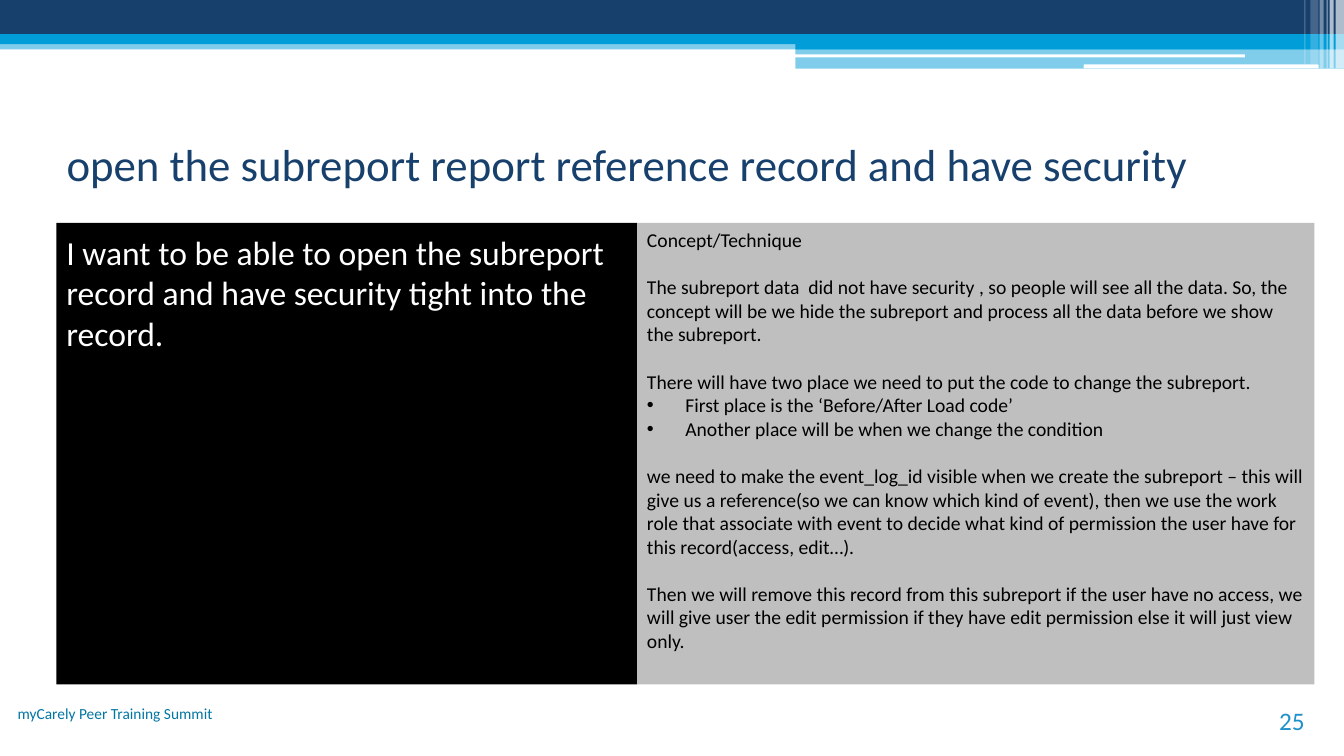
from dataclasses import dataclass

import pptx
import pptx.dml.color
import pptx.enum.shapes
import pptx.enum.text
import pptx.oxml.ns
import pptx.util
from lxml import etree

RECT = pptx.enum.shapes.MSO_SHAPE.RECTANGLE
ROUNDED = pptx.enum.shapes.MSO_SHAPE.ROUNDED_RECTANGLE
ALIGN = pptx.enum.text.PP_ALIGN
ANCHOR = pptx.enum.text.MSO_ANCHOR
WIDTH, HEIGHT = pptx.util.Inches(13.33), pptx.util.Inches(7.5)


@dataclass(frozen=True)
class Theme:
    font: str = "Calibri"
    navy: str = "17406D"
    blue: str = "009DD9"
    footer: str = "0076A3"
    number: str = "2191C9"
    white: str = "FFFFFF"
    black: str = "000000"
    grey: str = "BFBFBF"
    title_size: int = 32
    lead_size: int = 24
    number_size: int = 18
    body_size: int = 14
    footer_size: int = 11
    paragraph_gap: int = 17
    bullet_indent: float = 0.38


THEME = Theme()

# Left, top, width and height in percent of the slide, then fill and opacity
BANDS = [
    ((0, 5.33, 100, 1.2), THEME.blue, 50),
    ((0, 0, 100, 4.53), THEME.navy, 100),
    ((0, 4.53, 100, 1.33), THEME.blue, 100),
    ((59.18, 5.2, 40.82, 1.33), THEME.blue, 100),
    ((59.18, 6.4, 40.82, 2.67), THEME.blue, 50),
]
HIGHLIGHTS = [(59.1, 7.2, 33.53, 0.4), (80.63, 8.53, 17.48, 0.53)]
# Left, width and height in percent of the slide, then opacity
STRIPES = [
    (99.38, 0.62, 9.07, 65),
    (98.93, 0.3, 9.07, 65),
    (98.7, 0.08, 9.07, 60),
    (98.18, 0.3, 9.07, 40),
    (97.5, 0.6, 8.53, 20),
    (97.05, 0.08, 8.53, 30),
]

# Text, whether a gap precedes it, whether it is bulleted
CONCEPT = [
    ("Concept/Technique", False, False),
    ("The subreport data  did not have security , so people will see all the data. "
     "So, the concept will be we hide the subreport and process all the data before "
     "we show the subreport.", True, False),
    ("There will have two place we need to put the code to change the subreport.",
     True, False),
    ("First place is the ‘Before/After Load code’", False, True),
    ("Another place will be when we change the condition", False, True),
    ("we need to make the event_log_id visible when we create the subreport – this "
     "will give us a reference(so we can know which kind of event), then we use the "
     "work role that associate with event to decide what kind of permission the user "
     "have for this record(access, edit…).", True, False),
    ("Then we will remove this record from this subreport if the user have no access, "
     "we will give user the edit permission if they have edit permission else it will "
     "just view only.", True, False),
]


def share(area):
    """Turn percentages of the slide into lengths."""
    left, top, width, height = area
    return [int(WIDTH * left / 100), int(HEIGHT * top / 100),
            int(WIDTH * width / 100), int(HEIGHT * height / 100)]


def color(value):
    return pptx.dml.color.RGBColor.from_string(value)


def add_block(page, area, fill, opacity=100, kind=RECT):
    block = page.shapes.add_shape(kind, *share(area))
    block.shadow.inherit = False
    block.line.fill.background()
    block.fill.solid()
    block.fill.fore_color.rgb = color(fill)
    if opacity < 100:
        tint = block.fill._xPr.find(".//" + pptx.oxml.ns.qn("a:srgbClr"))
        etree.SubElement(tint, pptx.oxml.ns.qn("a:alpha"), val=str(opacity * 1000))
    return block


def style(para, size, ink, align=ALIGN.LEFT):
    para.alignment = align
    para.font.name = THEME.font
    para.font.size = pptx.util.Pt(size)
    para.font.color.rgb = color(ink)


def write(box, text, size, ink, align=ALIGN.LEFT, anchor=ANCHOR.TOP):
    frame = box.text_frame
    frame.word_wrap = True
    frame.auto_size = pptx.enum.text.MSO_AUTO_SIZE.NONE
    frame.vertical_anchor = anchor
    frame.text = text
    style(frame.paragraphs[0], size, ink, align)


def add_bullet(para):
    indent = pptx.util.Inches(THEME.bullet_indent)
    properties = para._p.get_or_add_pPr()
    properties.set("marL", str(indent))
    properties.set("indent", str(-indent))
    etree.SubElement(properties, pptx.oxml.ns.qn("a:buFont"), typeface="Arial")
    etree.SubElement(properties, pptx.oxml.ns.qn("a:buChar"), char="•")


def add_banner(page):
    for area, fill, opacity in BANDS:
        add_block(page, area, fill, opacity)
    for area in HIGHLIGHTS:
        add_block(page, area, THEME.white, kind=ROUNDED)
    for left, width, height, opacity in STRIPES:
        add_block(page, (left, 0, width, height), THEME.white, opacity)


def add_title(page, text):
    title = page.shapes.title
    title.left, title.top, title.width, title.height = share((4.2, 13.87, 88.73, 15.6))
    write(title, text, THEME.title_size, THEME.navy, anchor=ANCHOR.MIDDLE)


def add_request(page, text):
    panel = add_block(page, (4.2, 29.47, 43.2, 61.07), THEME.black)
    write(panel, text, THEME.lead_size, THEME.white)
    panel.text_frame.margin_top = pptx.util.Inches(0.09)


def add_concept(page, entries):
    panel = add_block(page, (47.4, 29.47, 50.4, 61.07), THEME.grey)
    frame = panel.text_frame
    frame.word_wrap = True
    frame.vertical_anchor = ANCHOR.TOP
    for index, (text, gap, bulleted) in enumerate(entries):
        para = frame.add_paragraph() if index else frame.paragraphs[0]
        para.text = text
        if gap:
            para.space_before = pptx.util.Pt(THEME.paragraph_gap)
        if bulleted:
            add_bullet(para)
        style(para, THEME.body_size, THEME.black)


def add_label(page, area, text, size, ink, anchor):
    box = page.shapes.add_textbox(*share(area))
    write(box, text, size, ink, ALIGN.RIGHT, anchor)


def main():
    deck = pptx.Presentation()
    deck.slide_width, deck.slide_height = WIDTH, HEIGHT
    page = deck.slides.add_slide(deck.slide_layouts.get_by_name("Title Only"))
    add_banner(page)
    add_title(page, "open the subreport report reference record and have security")
    add_request(page, "I want to be able to open the subreport record and have "
                      "security tight into the record.")
    add_label(page, (0, 92.53, 16.58, 6.67), "myCarely Peer Training Summit",
              THEME.footer_size, THEME.footer, ANCHOR.TOP)
    add_label(page, (89.48, 92.67, 8.33, 5.33), "25",
              THEME.number_size, THEME.number, ANCHOR.BOTTOM)
    add_concept(page, CONCEPT)
    deck.save("out.pptx")


if __name__ == "__main__":
    main()
